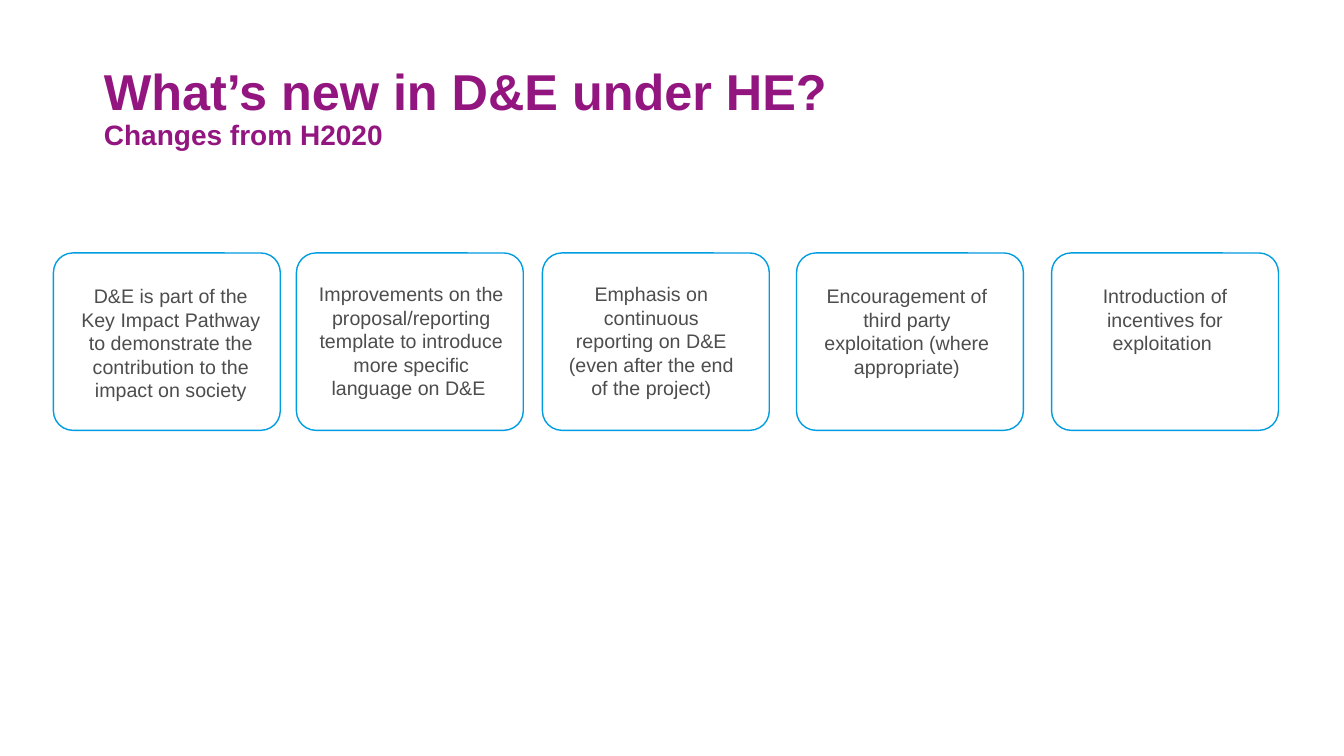
from pptx import Presentation
from pptx.dml.color import RGBColor
from pptx.enum.shapes import MSO_SHAPE
from pptx.enum.text import MSO_ANCHOR, MSO_AUTO_SIZE, PP_ALIGN
from pptx.util import Inches, Pt

ROUNDED = MSO_SHAPE.ROUNDED_RECTANGLE
BOTTOM = MSO_ANCHOR.BOTTOM
NO_FIT, GROW = MSO_AUTO_SIZE.NONE, MSO_AUTO_SIZE.SHAPE_TO_FIT_TEXT
LEFT, CENTER = PP_ALIGN.LEFT, PP_ALIGN.CENTER

COLORS = {"title": "931680", "text": "4D4D4D", "line": "009EE0", "card": "FFFFFF"}
FONT = "Arial"
TITLE_ONLY = 5
CARD_TOP, CARD_W, CARD_H = 2.51, 2.25, 1.76
LINE_H, TEXT_PAD = 0.236, 0.1

# card left, text left, text top, text width, lines of text, text
CARDS = [
    (0.53, 0.68, 2.77, 2.03, 5, "D&E is part of the Key Impact Pathway to "
     "demonstrate the contribution to the impact on society"),
    (2.94, 3.05, 2.75, 2.06, 5, "Improvements on the proposal/reporting template "
     "to introduce more specific language on D&E "),
    (5.38, 5.5, 2.75, 1.92, 5, "Emphasis on continuous reporting on D&E "
     "(even after the end of the project)"),
    (7.9, 8.04, 2.77, 1.91, 4, "Encouragement of third party exploitation "
     "(where appropriate)"),
    (10.43, 10.8, 2.77, 1.51, 3, "Introduction of incentives for exploitation "),
]


def color(name):
    return RGBColor.from_string(COLORS[name])


def add_run(p, text, size, color_name, bold=False):
    r = p.add_run()
    r.text = text
    r.font.name = FONT
    r.font.size = Pt(size)
    r.font.bold = bold
    r.font.color.rgb = color(color_name)


def set_title(s, heading, subheading):
    sp = s.shapes.title
    sp.left, sp.top = Inches(0.93), Inches(0.98)
    sp.width, sp.height = Inches(11.5), Inches(0.52)
    tf = sp.text_frame
    tf.auto_size = NO_FIT
    tf.word_wrap = True
    tf.vertical_anchor = BOTTOM
    tf.margin_bottom = 0
    p = tf.paragraphs[0]
    p.alignment = LEFT
    p.line_spacing = 0.9
    add_run(p, heading, 36, "title", bold=True)
    p.add_line_break()
    add_run(p, subheading, 20, "title", bold=True)


def add_card(s, left):
    sp = s.shapes.add_shape(ROUNDED, Inches(left), Inches(CARD_TOP),
                            Inches(CARD_W), Inches(CARD_H))
    sp.adjustments[0] = 0.11
    sp.shadow.inherit = False
    sp.fill.solid()
    sp.fill.fore_color.rgb = color("card")
    sp.line.color.rgb = color("line")
    sp.line.width = Pt(1)


def add_card_text(s, left, top, width, lines, text):
    height = lines * LINE_H + TEXT_PAD
    sp = s.shapes.add_textbox(Inches(left), Inches(top), Inches(width), Inches(height))
    tf = sp.text_frame
    tf.word_wrap = True
    tf.auto_size = GROW
    p = tf.paragraphs[0]
    p.alignment = CENTER
    add_run(p, text, 14, "text")


def main():
    prs = Presentation()
    prs.slide_width, prs.slide_height = Inches(13.33), Inches(7.5)
    s = prs.slides.add_slide(prs.slide_layouts[TITLE_ONLY])
    set_title(s, "What’s new in D&E under HE?", "Changes from H2020")
    for card_left, *text_block in CARDS:
        add_card(s, card_left)
        add_card_text(s, *text_block)
    prs.save("out.pptx")


if __name__ == "__main__":
    main()
